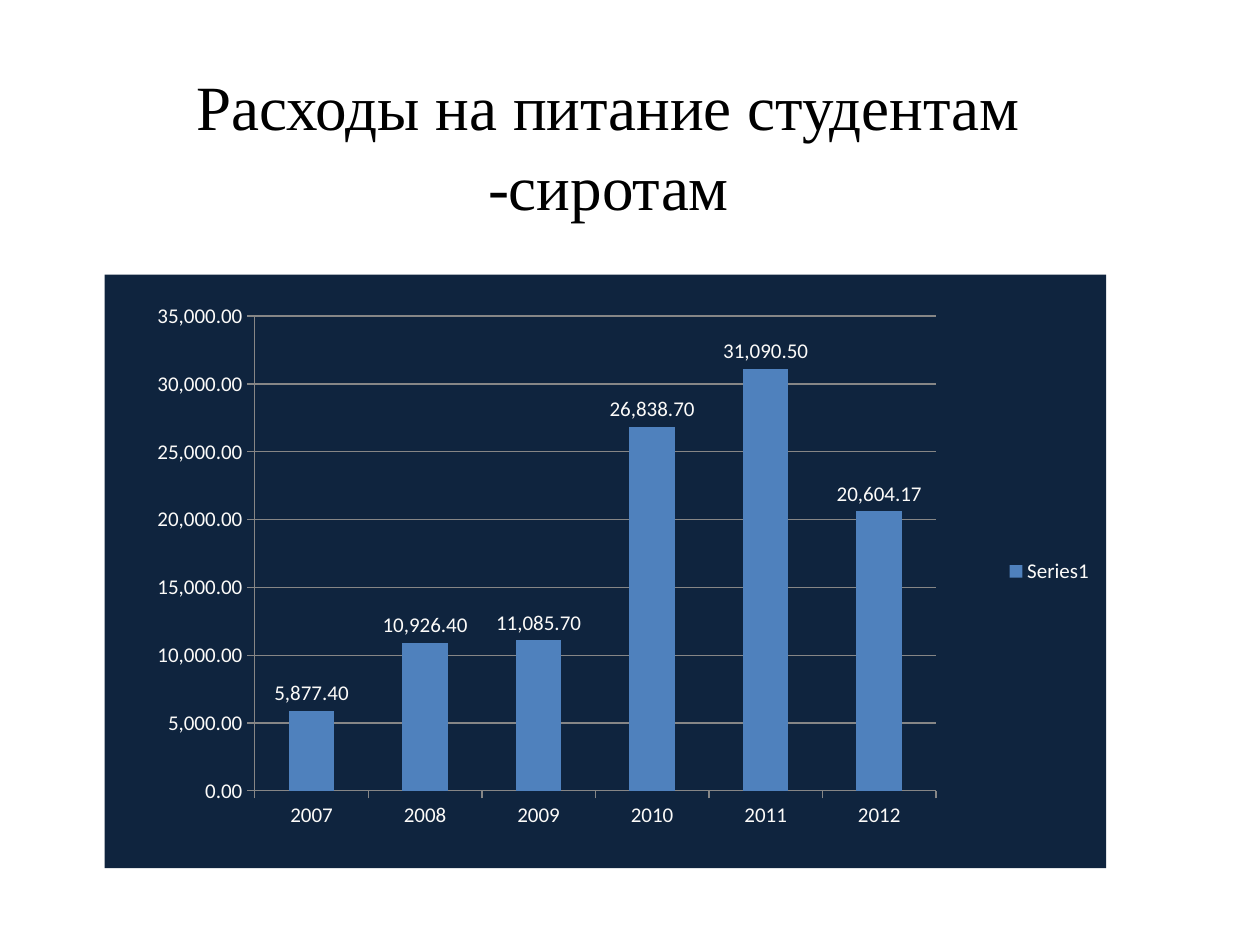
from dataclasses import dataclass

from lxml import etree
from pptx import Presentation
from pptx.chart.data import CategoryChartData
from pptx.dml.color import RGBColor
from pptx.enum.chart import XL_CHART_TYPE, XL_LABEL_POSITION, XL_LEGEND_POSITION, XL_TICK_MARK
from pptx.enum.text import MSO_ANCHOR, PP_ALIGN
from pptx.oxml import parse_xml
from pptx.oxml.ns import nsdecls, qn
from pptx.util import Inches, Pt

COLUMN_CLUSTERED = XL_CHART_TYPE.COLUMN_CLUSTERED
OUTSIDE_END = XL_LABEL_POSITION.OUTSIDE_END
LEGEND_RIGHT = XL_LEGEND_POSITION.RIGHT
TICK_OUTSIDE = XL_TICK_MARK.OUTSIDE
MIDDLE = MSO_ANCHOR.MIDDLE
CENTER = PP_ALIGN.CENTER

BLACK = RGBColor(0x00, 0x00, 0x00)
NAVY = RGBColor(0x0F, 0x24, 0x3E)
BLUE = RGBColor(0x4F, 0x81, 0xBD)
IVORY = RGBColor(0xFC, 0xFB, 0xF9)
GREY = RGBColor(0x86, 0x86, 0x86)

SLIDE_WIDTH = Inches(10)
SLIDE_HEIGHT = Inches(7.5)
NUMBER_FORMAT = "#,##0.00"
TITLE = "Расходы на питание студентам -сиротам"
EXPENSES = {
    "2007": 5877.4,
    "2008": 10926.4,
    "2009": 11085.7,
    "2010": 26838.7,
    "2011": 31090.5,
    "2012": 20604.17,
}


@dataclass(frozen=True)
class Area:
    left: float
    top: float
    width: float
    height: float

    def box(self) -> tuple[int, int, int, int]:
        return (
            Inches(self.left),
            Inches(self.top),
            Inches(self.width),
            Inches(self.height),
        )


TITLE_AREA = Area(0.83, 0.44, 8, 1.39)
CHART_AREA = Area(0.83, 2.18, 7.95, 4.71)
PLOT_SHARE = Area(0.15, 0.07, 0.68, 0.8)


def add_title(slide) -> None:
    text_frame = slide.shapes.add_textbox(*TITLE_AREA.box()).text_frame
    text_frame.word_wrap = True
    text_frame.vertical_anchor = MIDDLE
    text_frame.text = TITLE
    paragraph = text_frame.paragraphs[0]
    paragraph.alignment = CENTER
    paragraph.line_spacing = 1.06
    font = paragraph.runs[0].font
    font.name = "Times New Roman"
    font.size = Pt(36)
    font.color.rgb = BLACK


def style_font(font) -> None:
    font.name = "Calibri"
    font.size = Pt(12)
    font.color.rgb = IVORY


def style_line(line) -> None:
    line.color.rgb = GREY
    line.width = Pt(0.75)


def style_axis(axis) -> None:
    axis.major_tick_mark = TICK_OUTSIDE
    style_font(axis.tick_labels.font)
    style_line(axis.format.line)


def fill_background(chart) -> None:
    properties = parse_xml(
        f'<c:spPr {nsdecls("c", "a")}><a:solidFill><a:srgbClr val="{NAVY}"/>'
        "</a:solidFill><a:ln><a:noFill/></a:ln></c:spPr>"
    )
    chart.element.find(qn("c:chart")).addnext(properties)


def place_plot(chart, share: Area) -> None:
    plot_area = chart.element.find(qn("c:chart")).find(qn("c:plotArea"))
    for old_layout in plot_area.findall(qn("c:layout")):
        plot_area.remove(old_layout)
    layout = etree.Element(qn("c:layout"))
    manual = etree.SubElement(layout, qn("c:manualLayout"))
    settings = {
        "layoutTarget": "inner",
        "xMode": "edge",
        "yMode": "edge",
        "x": share.left,
        "y": share.top,
        "w": share.width,
        "h": share.height,
    }
    for name, value in settings.items():
        etree.SubElement(manual, qn(f"c:{name}"), val=str(value))
    plot_area.insert(0, layout)


def add_expense_chart(slide) -> None:
    data = CategoryChartData(number_format=NUMBER_FORMAT)
    data.categories = list(EXPENSES)
    data.add_series("Series1", list(EXPENSES.values()))
    chart = slide.shapes.add_chart(COLUMN_CLUSTERED, *CHART_AREA.box(), data).chart
    chart.has_title = False
    style_font(chart.font)
    fill_background(chart)
    place_plot(chart, PLOT_SHARE)

    style_axis(chart.category_axis)
    value_axis = chart.value_axis
    style_axis(value_axis)
    value_axis.minimum_scale = 0
    value_axis.maximum_scale = 35000
    value_axis.major_unit = 5000
    value_axis.tick_labels.number_format = NUMBER_FORMAT
    value_axis.tick_labels.number_format_is_linked = False
    style_line(value_axis.major_gridlines.format.line)

    chart.has_legend = True
    chart.legend.position = LEGEND_RIGHT
    chart.legend.include_in_layout = False
    style_font(chart.legend.font)

    plot = chart.plots[0]
    plot.gap_width = 150
    plot.vary_by_categories = False
    series = plot.series[0]
    series.format.fill.solid()
    series.format.fill.fore_color.rgb = BLUE
    labels = series.data_labels
    labels.show_value = True
    labels.position = OUTSIDE_END
    labels.number_format = NUMBER_FORMAT
    labels.number_format_is_linked = False
    style_font(labels.font)


def main() -> None:
    presentation = Presentation()
    presentation.slide_width = SLIDE_WIDTH
    presentation.slide_height = SLIDE_HEIGHT
    slide = presentation.slides.add_slide(presentation.slide_layouts[6])
    add_expense_chart(slide)
    add_title(slide)
    presentation.save("out.pptx")


if __name__ == "__main__":
    main()
